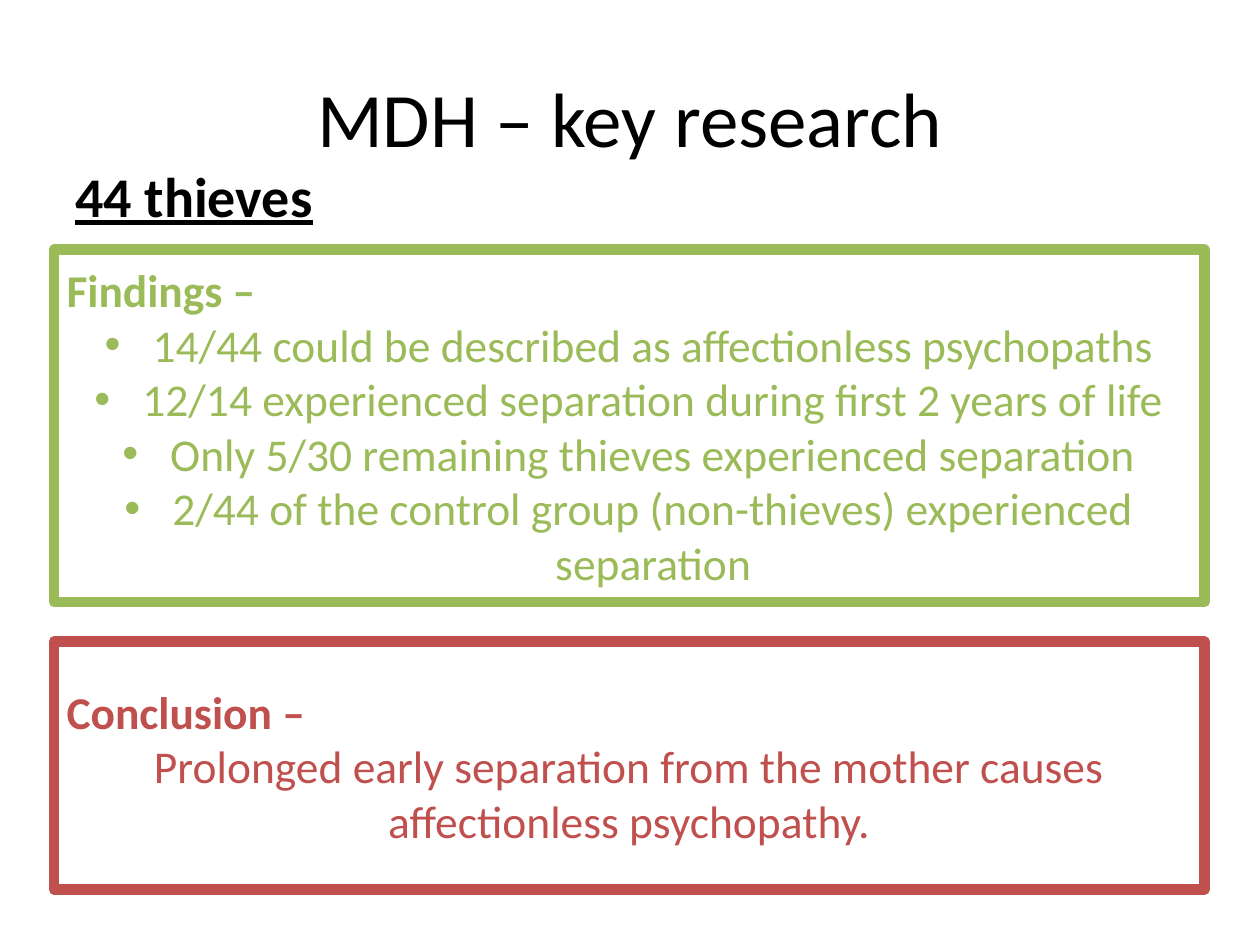
from lxml.etree import SubElement
from pptx import Presentation
from pptx.dml.color import RGBColor
from pptx.enum.shapes import MSO_SHAPE as Shape
from pptx.enum.text import MSO_ANCHOR as Anchor, PP_ALIGN as Align
from pptx.oxml.ns import qn
from pptx.util import Inches, Pt

BLACK, WHITE, GREEN, RED = "000000", "FFFFFF", "9BBB59", "C0504D"
BOX_LEFT, BOX_WIDTH = 0.43, 9.13
FINDINGS = [
    "14/44 could be described as affectionless psychopaths",
    "12/14 experienced separation during first 2 years of life",
    "Only 5/30 remaining thieves experienced separation",
    "2/44 of the control group (non-thieves) experienced separation",
]
CONCLUSION = [
    "Prolonged early separation from the mother causes affectionless psychopathy.",
]


def rgb(value):
    """Turn a hex string into a colour."""
    return RGBColor.from_string(value)


def write(para, text, size, colour, align, bold=False, underline=False):
    """Fill a paragraph and format its runs."""
    para.text = text
    para.alignment = align
    for span in para.runs:
        font = span.font
        font.name, font.size = "Calibri", Pt(size)
        font.bold, font.underline = bold, underline
        font.color.rgb = rgb(colour)


def add_bullet(para):
    """Give a paragraph a round bullet with a hanging indent."""
    props = para._p.get_or_add_pPr()
    props.set("marL", str(Inches(0.38)))
    props.set("indent", str(-Inches(0.38)))
    SubElement(props, qn("a:buFont"), typeface="Arial")
    SubElement(props, qn("a:buChar"), char="•")


def set_title(page, text):
    """Place and format the title placeholder."""
    title = page.shapes.title
    title.left, title.top = Inches(0.5), Inches(0.3)
    title.width, title.height = Inches(9), Inches(1.25)
    frame = title.text_frame
    frame.vertical_anchor = Anchor.MIDDLE
    write(frame.paragraphs[0], text, 44, BLACK, Align.CENTER)


def add_subheading(page, text):
    """Add the underlined study name below the title."""
    box = page.shapes.add_textbox(Inches(0.5), Inches(1.23), Inches(9), Inches(4.95))
    frame = box.text_frame
    frame.word_wrap = True
    write(frame.paragraphs[0], text, 32, BLACK, Align.LEFT, bold=True, underline=True)


def add_panel(page, top, height, colour, heading, lines, bulleted=False):
    """Add an outlined panel with a bold heading and centred lines."""
    box = page.shapes.add_shape(
        Shape.RECTANGLE, Inches(BOX_LEFT), Inches(top), Inches(BOX_WIDTH), Inches(height)
    )
    box.shadow.inherit = False
    box.fill.solid()
    box.fill.fore_color.rgb = rgb(WHITE)
    box.line.color.rgb = rgb(colour)
    box.line.width = Pt(6)
    frame = box.text_frame
    frame.word_wrap = True
    frame.vertical_anchor = Anchor.MIDDLE
    write(frame.paragraphs[0], heading, 26, colour, Align.LEFT, bold=True)
    for line in lines:
        para = frame.add_paragraph()
        write(para, line, 26, colour, Align.CENTER)
        if bulleted:
            add_bullet(para)


def main():
    """Build the slide and save it."""
    deck = Presentation()
    deck.slide_width, deck.slide_height = Inches(10), Inches(7.5)
    page = deck.slides.add_slide(deck.slide_layouts[5])
    set_title(page, "MDH – key research")
    add_subheading(page, "44 thieves")
    add_panel(page, 1.98, 2.8, GREEN, "Findings –", FINDINGS, bulleted=True)
    add_panel(page, 5.09, 1.97, RED, "Conclusion –", CONCLUSION)
    deck.save("out.pptx")


if __name__ == "__main__":
    main()
